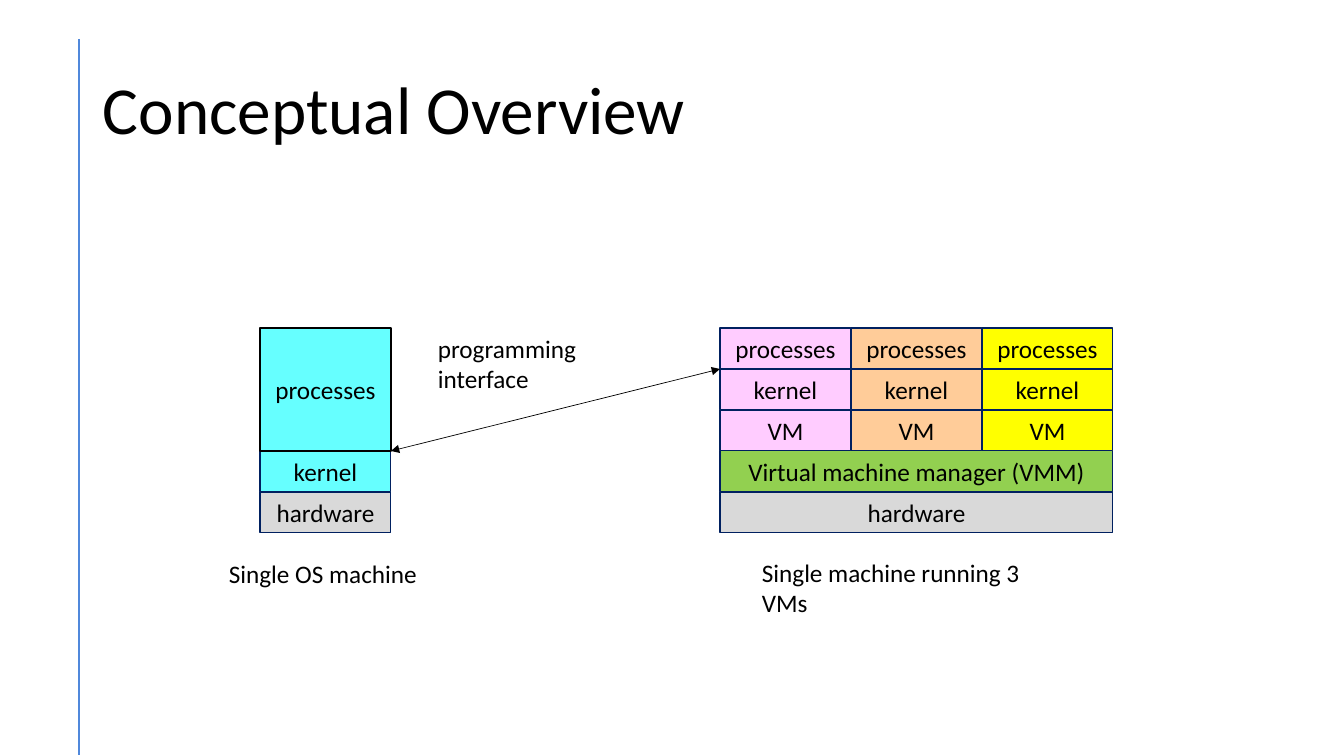
from dataclasses import dataclass

from lxml.etree import SubElement
from pptx import Presentation
from pptx.dml.color import RGBColor
from pptx.enum.shapes import MSO_CONNECTOR as Connector, MSO_SHAPE as Shape
from pptx.enum.text import MSO_ANCHOR as Anchor, PP_ALIGN as Align
from pptx.oxml.ns import qn
from pptx.util import Emu, Pt


@dataclass(frozen=True)
class Theme:
    font: str = "Calibri"
    title_size: int = 48
    body_size: int = 18
    black: str = "000000"
    border: str = "002060"
    accent: str = "5088DB"
    hardware: str = "D9D9D9"
    host: str = "66FFFF"
    manager: str = "92D050"
    machines: tuple = ("FFCCFF", "FFCC99", "FFFF00")


def px(length):
    return Emu(round(length * 914400 / 100.8))


class Diagram:
    def __init__(self, slide, theme):
        self.slide = slide
        self.theme = theme

    def add_text(self, shape, text, size, align, anchor):
        frame = shape.text_frame
        frame.word_wrap = True
        frame.vertical_anchor = anchor
        paragraph = frame.paragraphs[0]
        paragraph.alignment = align
        run = paragraph.add_run()
        run.text = text
        run.font.name = self.theme.font
        run.font.size = Pt(size)
        run.font.color.rgb = RGBColor.from_string(self.theme.black)
        return paragraph

    def label(self, text, left, top, width, height, size=None, anchor=Anchor.TOP):
        shape = self.slide.shapes.add_textbox(px(left), px(top), px(width), px(height))
        return self.add_text(shape, text, size or self.theme.body_size, Align.LEFT, anchor)

    def block(self, text, left, top, width, height, fill, border=None, weight=0.75):
        shape = self.slide.shapes.add_shape(
            Shape.RECTANGLE, px(left), px(top), px(width), px(height))
        shape.shadow.inherit = False
        shape.fill.solid()
        shape.fill.fore_color.rgb = RGBColor.from_string(fill)
        shape.line.color.rgb = RGBColor.from_string(border or self.theme.border)
        shape.line.width = Pt(weight)
        self.add_text(shape, text, self.theme.body_size, Align.CENTER, Anchor.MIDDLE)

    def line(self, start, end, color, weight, arrows=False):
        connector = self.slide.shapes.add_connector(
            Connector.STRAIGHT, *map(px, start + end))
        connector.line.color.rgb = RGBColor.from_string(color)
        connector.line.width = Pt(weight)
        properties = connector._element.spPr
        if arrows:
            outline = properties.find(qn("a:ln"))
            for tip in ("a:headEnd", "a:tailEnd"):
                SubElement(outline, qn(tip), type="triangle")
        SubElement(properties, qn("a:effectLst"))


def main():
    presentation = Presentation()
    presentation.slide_width = px(1344)
    presentation.slide_height = px(756)
    slide = presentation.slides.add_slide(presentation.slide_layouts[6])
    theme = Theme()
    diagram = Diagram(slide, theme)

    diagram.line((79, 39), (79, 755), theme.accent, 2)
    title = diagram.label("Conceptual Overview", 93, 40, 1159, 146,
                          theme.title_size, Anchor.MIDDLE)
    title.line_spacing = 0.9

    column, row, top = 131, 41, 328
    single_left, shared_left = 260, 720
    shared_width = column * len(theme.machines)
    kernel_top, hardware_top = top + 3 * row, top + 4 * row

    diagram.block("hardware", single_left, hardware_top, column, row, theme.hardware)
    diagram.block("kernel", single_left, kernel_top, column, row, theme.host)
    diagram.block("processes", single_left, top, column, 3 * row,
                  theme.host, theme.black, 1)

    diagram.block("hardware", shared_left, hardware_top, shared_width, row,
                  theme.hardware)
    diagram.block("Virtual machine manager (VMM)", shared_left, kernel_top,
                  shared_width, row, theme.manager)
    for machine, color in enumerate(theme.machines):
        for layer, name in enumerate(("processes", "kernel", "VM")):
            diagram.block(name, shared_left + machine * column, top + layer * row,
                          column, row, color)

    diagram.line((single_left + column, kernel_top), (shared_left, top + row),
                 theme.black, 0.5, arrows=True)
    diagram.label("programming interface", 428, 328, 250, 41)
    diagram.label("Single OS machine", 219, 553, 214, 41)
    diagram.label("Single machine running 3 VMs", 752, 552, 322, 41)

    presentation.save("out.pptx")


if __name__ == "__main__":
    main()
